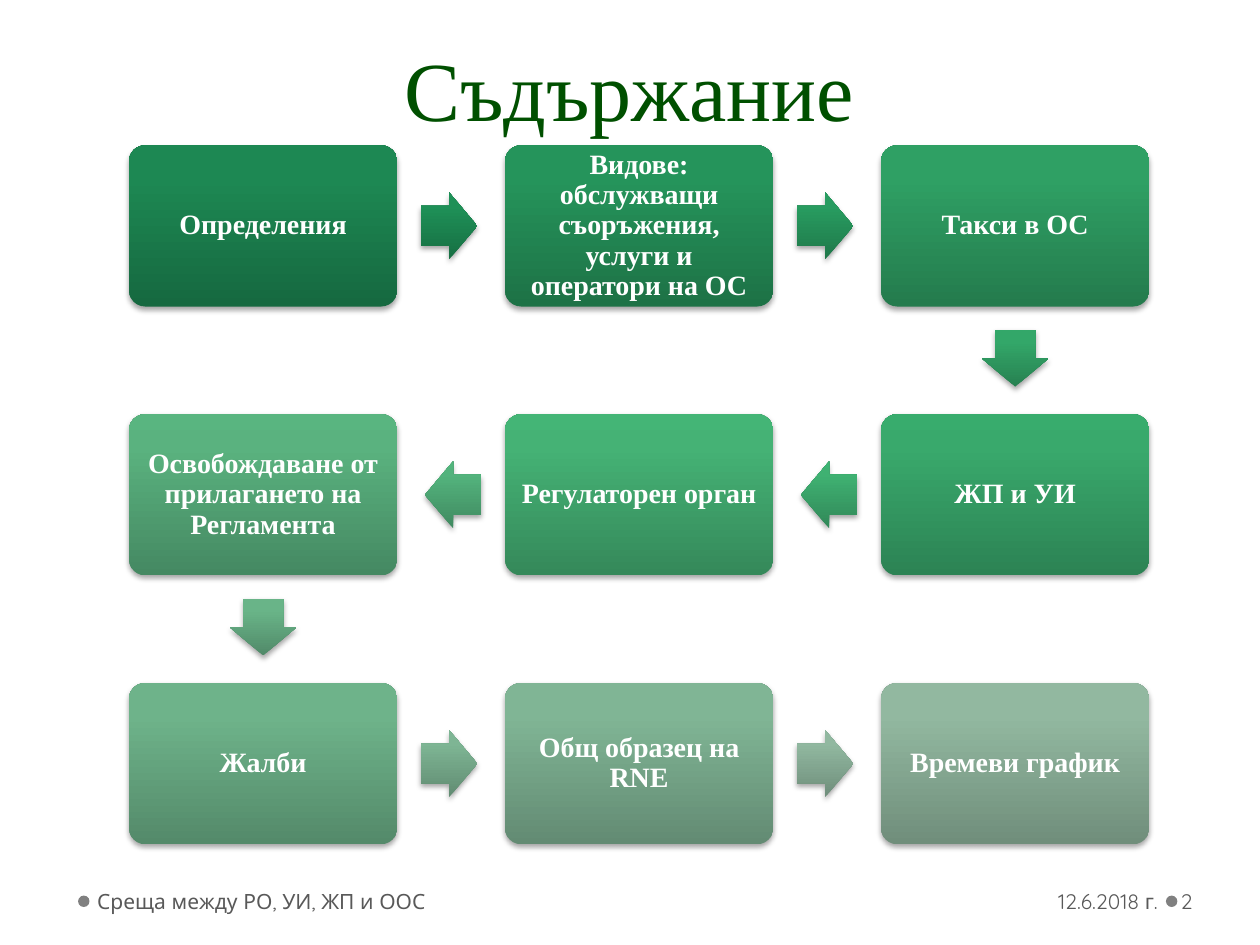
from copy import deepcopy
from dataclasses import dataclass
from math import atan2, degrees

from lxml.etree import SubElement
from pptx import Presentation
from pptx.dml.color import RGBColor
from pptx.enum.shapes import MSO_SHAPE as Preset
from pptx.enum.text import MSO_ANCHOR as Anchor, MSO_AUTO_SIZE as AutoSize, PP_ALIGN as Align
from pptx.oxml.ns import qn
from pptx.util import Cm, Pt

SERIF, SANS = "Times New Roman", "Quicksand"
COLUMNS = 3
LEFT, TOP = 2.6, 2.93
BOX_WIDTH, BOX_HEIGHT = 5.41, 3.25
PITCH_X, PITCH_Y = 7.58, 5.42
ARROW_LENGTH, ARROW_WIDTH = 1.14, 1.35
ARROW_SETBACK = 0.04
STOP_POSITIONS = (0, 0.8, 1)


@dataclass
class Step:
    text: str
    box_colors: str
    arrow_colors: str = ""  # arrow to the next step


@dataclass
class FooterItem:
    text: str
    left: float
    width: float
    margin_left: float
    margin_right: float
    align: Align = Align.LEFT


STEPS = [
    Step("Определения", "166940 1D8853 1B8B53", "176F43 1E9057 1C9257"),
    Step("Видове: обслужващи съоръжения, услуги и оператори на ОС",
         "1D7246 25945B 23975C", "1F784A 289C60 269F60"),
    Step("Такси в ОС", "247B4D 2FA064 2DA264", "278151 33A769 31AA69"),
    Step("ЖП и УИ", "2C8354 39A96C 38AC6D", "318858 3FB172 3DB473"),
    Step("Регулаторен орган", "35895A 45B275 44B576", "408A60 53B37D 52B67D"),
    Step("Освобождаване от прилагането на Регламента",
         "458962 5AB27F 59B580", "518A69 69B488 68B688"),
    Step("Жалби", "548A6A 6EB38A 6DB58A", "618C72 7EB594 7DB794"),
    Step("Общ образец на RNE", "638B73 80B595 80B796", "6F8E7B 91B8A0 91BAA0"),
    Step("Времеви график", "708E7B 92B8A0 92BAA1"),
]

FOOTER = [
    FooterItem("12.6.2018 г.", 17.68, 5.79, 0.25, 0.13, Align.RIGHT),
    FooterItem("Среща между РО, УИ, ЖП и ООС", 1.83, 7.9, 0.13, 0.25),
    FooterItem("2", 23.72, 1.55, 0.08, 0.13),
]
DOT_LEFTS = (1.57, 23.5)


def color(value: str) -> RGBColor:
    return RGBColor.from_string(value)


def write(frame, text: str, align: Align, font_color: str, **font_format):
    """Put one formatted paragraph in a text frame."""
    frame.word_wrap = True
    paragraph = frame.paragraphs[0]
    paragraph.alignment = align
    run = paragraph.add_run()
    run.text = text
    run.font.color.rgb = color(font_color)
    for name, value in font_format.items():
        setattr(run.font, name, value)
    return paragraph


def set_margins(frame, left: float, top: float, right: float, bottom: float) -> None:
    margins = {"left": left, "top": top, "right": right, "bottom": bottom}
    for side, value in margins.items():
        setattr(frame, f"margin_{side}", Cm(value))


def add_centered(slide, preset: Preset, center: tuple, width: float, height: float):
    x, y = center
    shape = slide.shapes.add_shape(
        preset, Cm(x - width / 2), Cm(y - height / 2), Cm(width), Cm(height))
    shape.line.fill.background()
    shape.shadow.inherit = False
    return shape


def add_gradient(shape, colors: str) -> None:
    """Upright three-stop gradient, dark at the bottom."""
    shape.fill.gradient()
    shape.fill.gradient_angle = 90
    gradient = shape._element.spPr.find(qn("a:gradFill"))
    gradient.set("rotWithShape", "0")
    stop_list = gradient.find(qn("a:gsLst"))
    stop_list.append(deepcopy(stop_list[-1]))
    for stop, position, value in zip(shape.fill.gradient_stops, STOP_POSITIONS, colors.split()):
        stop.position = position
        stop.color.rgb = color(value)


def add_shadow(shape) -> None:
    effects = shape._element.spPr.find(qn("a:effectLst"))
    shadow = SubElement(effects, qn("a:outerShdw"), blurRad=str(Pt(3.1)), dist=str(Pt(1.8)),
                        dir="5400000", rotWithShape="0")
    black = SubElement(shadow, qn("a:srgbClr"), val="000000")
    SubElement(black, qn("a:alpha"), val="35000")


def step_center(index: int) -> tuple:
    """Steps run left to right, then right to left on every second row."""
    row, column = divmod(index, COLUMNS)
    if row % 2:
        column = COLUMNS - 1 - column
    return LEFT + BOX_WIDTH / 2 + column * PITCH_X, TOP + BOX_HEIGHT / 2 + row * PITCH_Y


def add_box(slide, step: Step, center: tuple) -> None:
    box = add_centered(slide, Preset.ROUNDED_RECTANGLE, center, BOX_WIDTH, BOX_HEIGHT)
    box.adjustments[0] = 0.1
    add_gradient(box, step.box_colors)
    add_shadow(box)
    frame = box.text_frame
    set_margins(frame, 0.17, 0.17, 0.17, 0.17)
    frame.vertical_anchor = Anchor.MIDDLE
    paragraph = write(frame, step.text, Align.CENTER, "FFFFFF", name=SERIF, size=Pt(16), bold=True)
    paragraph.line_spacing = 0.9


def add_arrow(slide, colors: str, start: tuple, end: tuple) -> None:
    step_x, step_y = end[0] - start[0], end[1] - start[1]
    distance = abs(step_x) + abs(step_y)
    share = 0.5 - ARROW_SETBACK / distance
    center = start[0] + step_x * share, start[1] + step_y * share
    arrow = add_centered(slide, Preset.RIGHT_ARROW, center, ARROW_LENGTH, ARROW_WIDTH)
    arrow.adjustments[0], arrow.adjustments[1] = 0.6, 0.5
    arrow.rotation = degrees(atan2(step_y, step_x))
    add_gradient(arrow, colors)
    add_shadow(arrow)


def add_footer_item(slide, item: FooterItem) -> None:
    box = slide.shapes.add_textbox(Cm(item.left), Cm(17.65), Cm(item.width), Cm(1.02))
    frame = box.text_frame
    set_margins(frame, item.margin_left, 0.13, item.margin_right, 0.13)
    frame.vertical_anchor = Anchor.MIDDLE
    write(frame, item.text, item.align, "595959", name=SANS, size=Pt(12))


def add_title(slide, text: str) -> None:
    title = slide.shapes.title
    place = {"left": 1.27, "top": 1.12, "width": 22.83, "height": 1.8}
    for name, value in place.items():
        setattr(title, name, Cm(value))
    frame = title.text_frame
    frame.auto_size = AutoSize.NONE
    frame.vertical_anchor = Anchor.BOTTOM
    paragraph = write(frame, text, Align.CENTER, "005000", name=SERIF, size=Pt(48))
    paragraph.line_spacing = Pt(58)


def main() -> None:
    presentation = Presentation()
    presentation.slide_width, presentation.slide_height = Cm(25.4), Cm(19.05)
    slide = presentation.slides.add_slide(presentation.slide_layouts[5])

    add_title(slide, "Съдържание")

    # Winding chain of steps
    for index, step in enumerate(STEPS):
        center = step_center(index)
        add_box(slide, step, center)
        if step.arrow_colors:
            add_arrow(slide, step.arrow_colors, center, step_center(index + 1))

    # Footer with its dots
    for left in DOT_LEFTS:
        dot = add_centered(slide, Preset.OVAL, (left + 0.12, 18.17), 0.23, 0.23)
        dot.fill.solid()
        dot.fill.fore_color.rgb = color("808080")
    for item in FOOTER:
        add_footer_item(slide, item)

    presentation.save("out.pptx")


if __name__ == "__main__":
    main()
